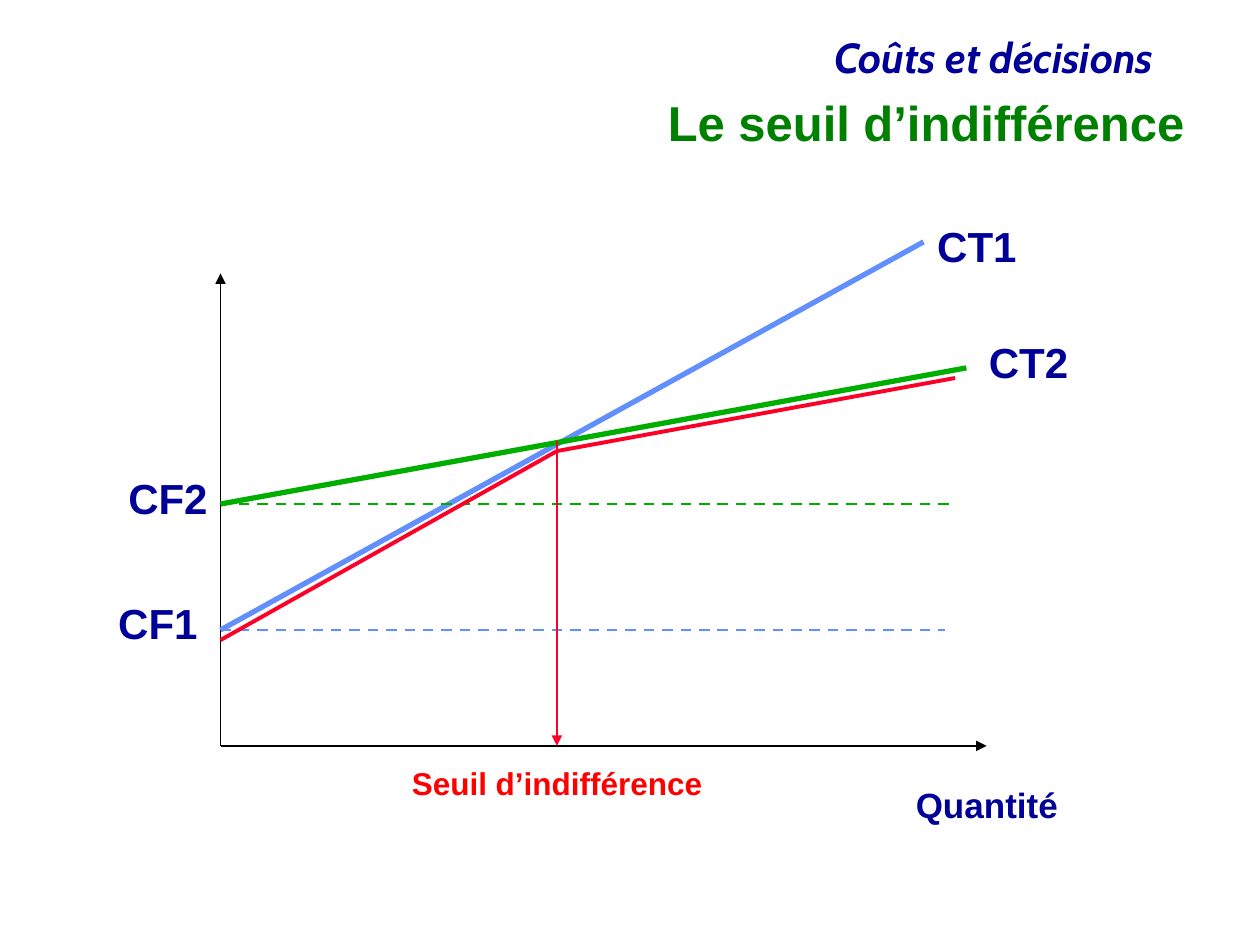
from lxml import etree
from pptx import Presentation
from pptx import util as u
from pptx.dml.color import RGBColor
from pptx.enum import dml, shapes, text
from pptx.oxml.ns import qn

NAVY = RGBColor(0x00, 0x00, 0x99)
TITLE_GREEN = RGBColor(0x00, 0x80, 0x00)
BLACK = RGBColor(0x00, 0x00, 0x00)
BLUE = RGBColor(0x61, 0x8F, 0xFD)
GREEN = RGBColor(0x00, 0xAE, 0x00)
CRIMSON = RGBColor(0xFC, 0x01, 0x28)
RED = RGBColor(0xFF, 0x00, 0x00)

# Chart geometry in inches
X0, Y0 = 1.75, 5.92
CF1_Y, CF2_Y = 5, 4
THRESHOLD_X = 4.42


class Deck:
    """Holds the style and the current slide."""

    font = "Arial"
    line_spacing = 0.9

    def __init__(self, prs):
        self.s = prs.slides.add_slide(prs.slide_layouts[5])

    def add_words(self, tf, words, size, color, align, font=None, italic=False):
        p = tf.paragraphs[0]
        p.alignment = align
        p.line_spacing = self.line_spacing
        r = p.add_run()
        r.text = words
        r.font.name = font or self.font
        r.font.size = u.Pt(size)
        r.font.bold = True
        r.font.italic = italic
        r.font.color.rgb = color

    def title(self, words, x, y, w, h):
        sp = self.s.shapes.title
        sp.left, sp.top, sp.width, sp.height = map(u.Inches, (x, y, w, h))
        tf = sp.text_frame
        tf.vertical_anchor = text.MSO_ANCHOR.MIDDLE
        tf.auto_size = text.MSO_AUTO_SIZE.NONE
        self.add_words(tf, words, 28, TITLE_GREEN, text.PP_ALIGN.RIGHT)

    def label(self, words, x, y, w, h, size=24, color=NAVY, wrap=False,
              align=text.PP_ALIGN.LEFT, **style):
        sp = self.s.shapes.add_textbox(*map(u.Inches, (x, y, w, h)))
        tf = sp.text_frame
        tf.word_wrap = wrap
        tf.auto_size = text.MSO_AUTO_SIZE.SHAPE_TO_FIT_TEXT
        self.add_words(tf, words, size, color, align, **style)

    def line(self, start, end, color, width, dashed=False, arrow=False):
        sp = self.s.shapes.add_connector(
            shapes.MSO_CONNECTOR.STRAIGHT, *map(u.Inches, (*start, *end)))
        sp.line.color.rgb = color
        sp.line.width = u.Pt(width)
        if dashed:
            sp.line.dash_style = dml.MSO_LINE.DASH
        props = sp.element.spPr
        if arrow:
            etree.SubElement(props.find(qn("a:ln")), qn("a:tailEnd"), type="triangle")
        etree.SubElement(props, qn("a:effectLst"))


def main():
    prs = Presentation()
    prs.slide_width, prs.slide_height = u.Inches(10), u.Inches(7.5)
    d = Deck(prs)

    # Headings
    d.label("Coûts et décisions", 1.25, 0.25, 8, 0.46, wrap=True,
            align=text.PP_ALIGN.RIGHT, font="Cabin", italic=True)
    d.title("Le seuil d’indifférence", 1.58, 0.75, 7.92, 0.5)

    # Axes
    for end in ((X0, 2.17), (7.83, Y0)):
        d.line((X0, Y0), end, BLACK, 1, arrow=True)

    # Total costs, then fixed costs
    d.line((X0, CF1_Y), (7.33, 1.92), BLUE, 3)
    d.line((X0, CF2_Y), (7.67, 2.92), GREEN, 3)
    d.line((X0, CF1_Y), (7.5, CF1_Y), BLUE, 1.5, dashed=True)
    d.line((X0, CF2_Y), (7.58, CF2_Y), GREEN, 1.5, dashed=True)

    # Indifference threshold
    d.line((THRESHOLD_X, 3.5), (THRESHOLD_X, Y0), CRIMSON, 1, arrow=True)

    # Cost labels
    for words, x, y in (("CF1", 0.84, 4.74), ("CF2", 0.92, 3.75),
                        ("CT1", 7.34, 1.75), ("CT2", 7.75, 2.67)):
        d.label(words, x, y, 0.83, 0.46)

    # Lowest-cost path
    bend = (THRESHOLD_X, 3.58)
    d.line((X0, 5.08), bend, CRIMSON, 2.25)
    d.line(bend, (7.58, 3), CRIMSON, 2.25)

    # Axis labels
    d.label("Seuil d’indifférence", 3.17, 6.05, 2.51, 0.37, size=18, color=RED)
    d.label("Quantité", 7.17, 6.21, 1.33, 0.4, size=20)

    prs.save("out.pptx")


if __name__ == "__main__":
    main()
